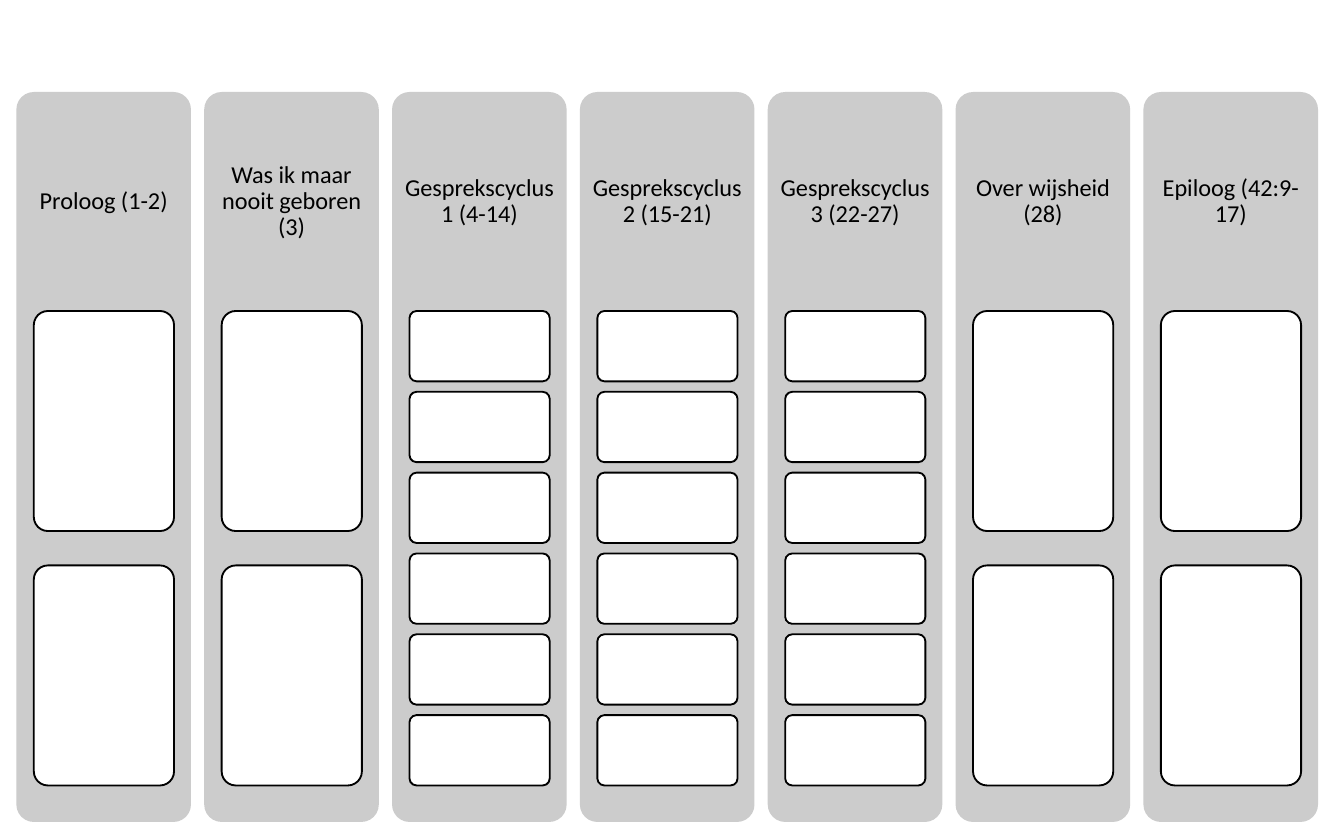
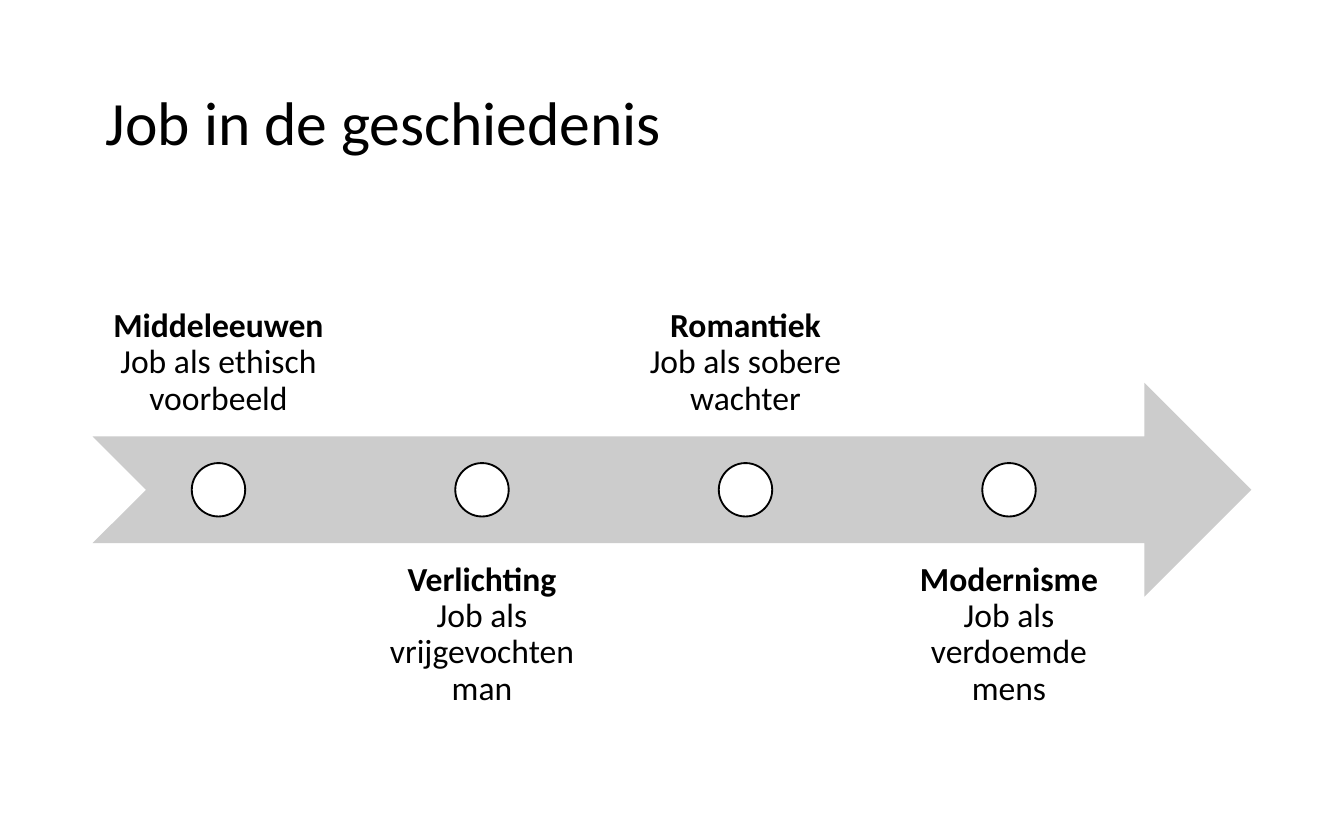
from dataclasses import dataclass

from pptx import Presentation
from pptx.dml.color import RGBColor
from pptx.enum.shapes import MSO_SHAPE
from pptx.enum.text import MSO_ANCHOR, PP_ALIGN
from pptx.util import Cm, Pt

ROUND, OVAL = MSO_SHAPE.ROUNDED_RECTANGLE, MSO_SHAPE.OVAL
ARROW = MSO_SHAPE.NOTCHED_RIGHT_ARROW
TOP, MIDDLE, BOTTOM = MSO_ANCHOR.TOP, MSO_ANCHOR.MIDDLE, MSO_ANCHOR.BOTTOM
LEFT, CENTER = PP_ALIGN.LEFT, PP_ALIGN.CENTER


@dataclass(frozen=True)
class Theme:
    ink: RGBColor = RGBColor(0, 0, 0)
    band: RGBColor = RGBColor(0xCC, 0xCC, 0xCC)
    paper: RGBColor = RGBColor(0xFF, 0xFF, 0xFF)
    font: str = "Calibri"
    title: int = 33
    era: int = 18
    head: int = 13
    line: int = 1


THEME = Theme()

# Heading and number of boxes of each part of the book
PARTS = [
    ("Proloog (1-2)", 2),
    ("Was ik maar nooit geboren (3)", 2),
    ("Gesprekscyclus 1 (4-14)", 6),
    ("Gesprekscyclus 2 (15-21)", 6),
    ("Gesprekscyclus 3 (22-27)", 6),
    ("Over wijsheid (28)", 2),
    ("Epiloog (42:9-17)", 2),
]
BOX_HEIGHT = {2: 4.16, 6: 1.33}

ERAS = [
    ("Middeleeuwen", "Job als ethisch voorbeeld"),
    ("Verlichting", "Job als vrijgevochten man"),
    ("Romantiek", "Job als sobere wachter"),
    ("Modernisme", "Job als verdoemde mens"),
]


def add_form(slide, kind, box, fill, outline=False):
    """Add a preset shape; box is left, top, width, height in cm."""
    form = slide.shapes.add_shape(kind, *map(Cm, box))
    form.shadow.inherit = False
    form.fill.solid()
    form.fill.fore_color.rgb = fill
    if outline:
        form.line.color.rgb = THEME.ink
        form.line.width = Pt(THEME.line)
    else:
        form.line.fill.background()
    if kind == ROUND:
        form.adjustments[0] = 0.1
    return form


def add_text(slide, text, box, size, anchor=MIDDLE, align=CENTER, inset=None):
    """Add a text box and return its runs; a vertical tab breaks the line."""
    frame = slide.shapes.add_textbox(*map(Cm, box)).text_frame
    frame.word_wrap = True
    frame.vertical_anchor = anchor
    if inset is not None:
        frame.margin_left = frame.margin_right = Cm(inset)
        frame.margin_top = frame.margin_bottom = Cm(inset)
    frame.text = text
    para = frame.paragraphs[0]
    para.alignment = align
    para.line_spacing = 0.9
    for run in para.runs:
        run.font.name = THEME.font
        run.font.size = Pt(size)
        run.font.color.rgb = THEME.ink
    return para.runs


def add_part(slide, left, head, count):
    """Add a column with its heading and evenly spaced boxes."""
    top, width = 1.74, 3.3
    add_form(slide, ROUND, (left, top, width, 13.8), THEME.band)
    add_text(slide, head, (left, top, width, 4.14), THEME.head, inset=0.12)
    first, span, height = 5.88, 8.97, BOX_HEIGHT[count]
    step = (span - height) / (count - 1)
    for row in range(count):
        box = (left + 0.33, first + row * step, 2.65, height)
        add_form(slide, ROUND, box, THEME.paper, outline=True)


def add_era(slide, mid, name, view, above):
    """Add a dot on the arrow with its label above or below."""
    width, dot = 4.76, 1.01
    box = (mid - width / 2, 4.21 if above else 10.27, width, 4.04)
    anchor = BOTTOM if above else TOP
    runs = add_text(slide, f"{name}\v{view}", box, THEME.era, anchor, inset=0.36)
    runs[0].font.bold = True
    place = (mid - dot / 2, 9.26 - dot / 2, dot, dot)
    add_form(slide, OVAL, place, THEME.paper, outline=True)


def build_parts(slide):
    for col, (head, count) in enumerate(PARTS):
        add_part(slide, 0.31 + col * 3.55, head, count)


def build_eras(slide):
    left, width = 1.75, 21.9
    add_text(slide, "Job in de geschiedenis", (left, 0.84, width, 3.07),
             THEME.title, align=LEFT)
    add_form(slide, ARROW, (left, 7.24, width, 4.04), THEME.band)
    for col, (name, view) in enumerate(ERAS):
        add_era(slide, 4.13 + col * 4.98, name, view, above=col % 2 == 0)


def main():
    deck = Presentation()
    deck.slide_width, deck.slide_height = Cm(25.4), Cm(15.88)
    blank = deck.slide_layouts[6]
    for build in (build_parts, build_eras):
        build(deck.slides.add_slide(blank))
    deck.save("out.pptx")


if __name__ == "__main__":
    main()
